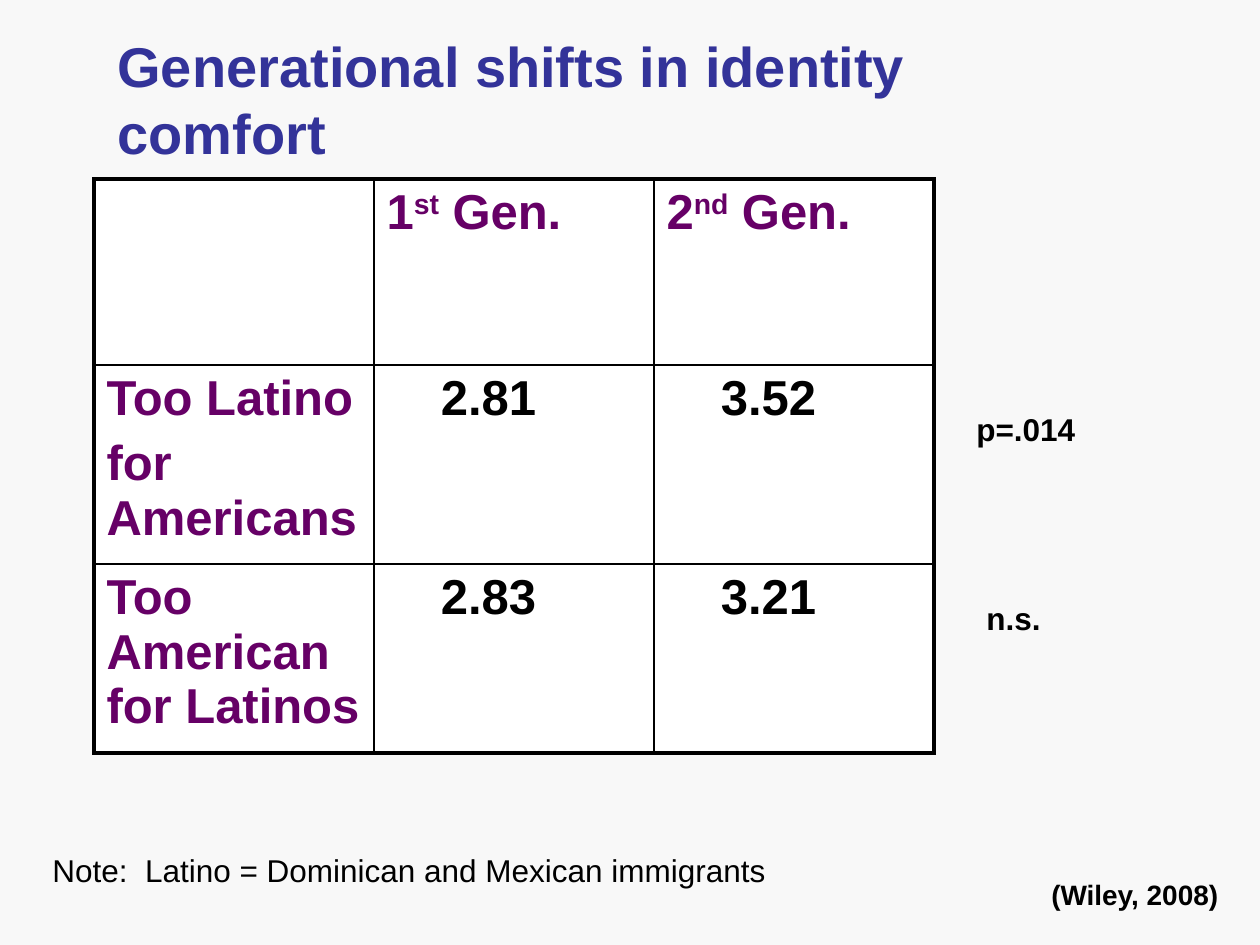
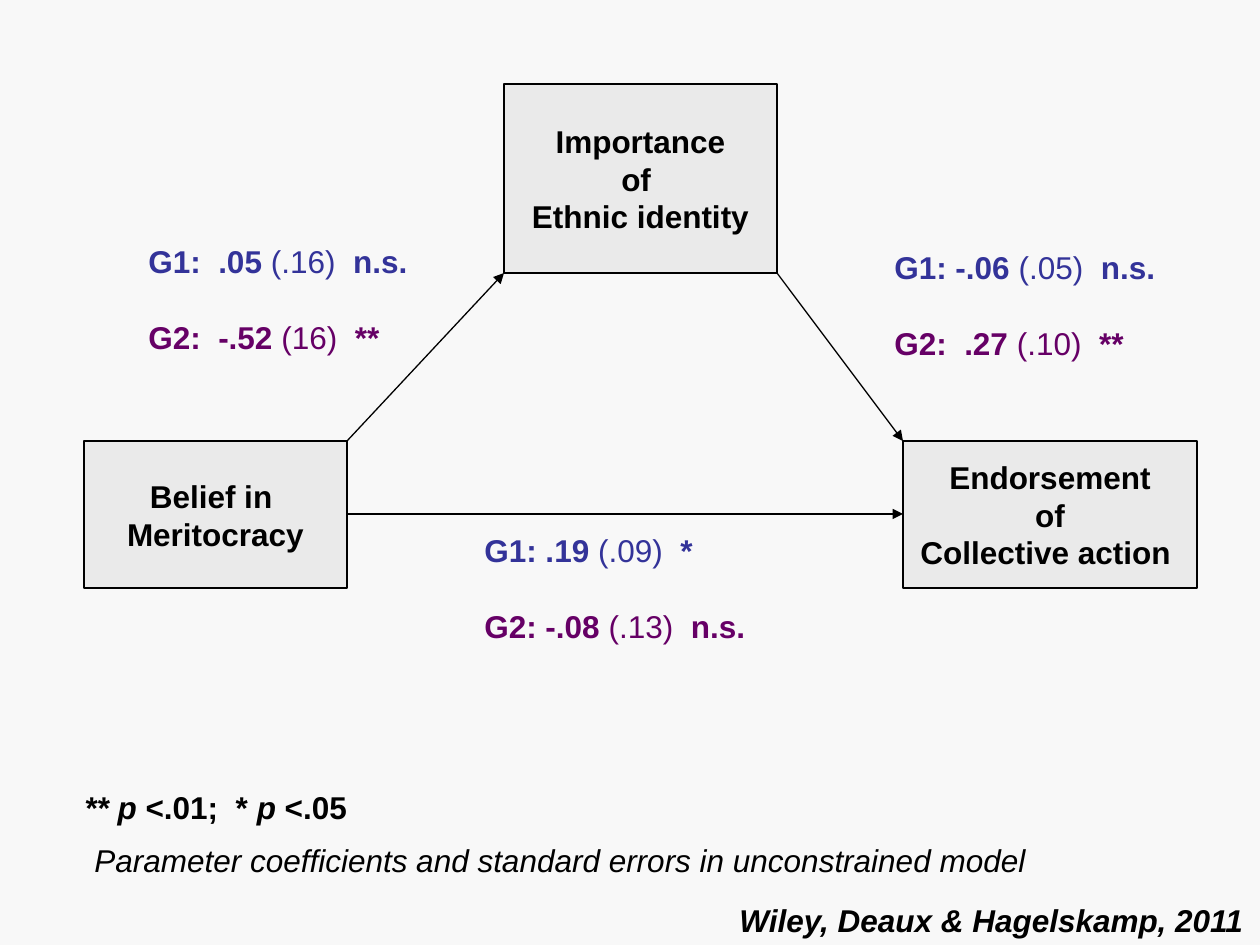
from dataclasses import dataclass
from typing import NamedTuple

from lxml import etree
from pptx import Presentation
from pptx.dml.color import RGBColor
from pptx.enum.shapes import MSO_CONNECTOR, MSO_SHAPE
from pptx.enum.text import MSO_ANCHOR, MSO_AUTO_SIZE, PP_ALIGN
from pptx.oxml.ns import qn
from pptx.util import Emu, Pt

RECT = MSO_SHAPE.RECTANGLE
STRAIGHT = MSO_CONNECTOR.STRAIGHT
MIDDLE = MSO_ANCHOR.MIDDLE
CENTER = PP_ALIGN.CENTER
FIXED = MSO_AUTO_SIZE.NONE
BLANK_LAYOUT = 6
EMU_PER_PX = 914400 / 126


@dataclass(frozen=True)
class Theme:
    font: str = "Arial"
    background: str = "F8F8F8"
    ink: str = "000000"
    blue: str = "333399"
    purple: str = "660066"
    node: str = "EAEAEA"
    cell: str = "FFFFFF"
    title: int = 32
    table: int = 28
    body: int = 18
    source: int = 16


THEME = Theme()


class Box(NamedTuple):
    left: int
    top: int
    width: int
    height: int

    @property
    def right(self):
        return self.left + self.width

    @property
    def bottom(self):
        return self.top + self.height

    @property
    def middle(self):
        return self.top + self.height // 2


def px(length):
    return Emu(round(length * EMU_PER_PX))


def rgb(color):
    return RGBColor.from_string(color)


def write(frame, paragraphs, align=None, gap=0, **base):
    """Fill a text frame; a paragraph is a string or a list of strings and (string, format) runs."""
    for index, runs in enumerate(paragraphs):
        paragraph = frame.add_paragraph() if index else frame.paragraphs[0]
        paragraph.alignment = align
        if index:
            paragraph.space_before = Pt(gap)
        for part in [runs] if isinstance(runs, str) else runs:
            words, own = (part, {}) if isinstance(part, str) else part
            look = {**base, **own}
            run = paragraph.add_run()
            run.text = words
            run.font.name = THEME.font
            run.font.size = Pt(look.get("size", THEME.body))
            run.font.bold = look.get("bold", False)
            run.font.italic = look.get("italic", False)
            run.font.color.rgb = rgb(look.get("color", THEME.ink))
            if look.get("raised"):
                run._r.get_or_add_rPr().set("baseline", "30000")


def label(slide, box, paragraphs, **look):
    frame = slide.shapes.add_textbox(*map(px, box)).text_frame
    frame.word_wrap = True
    frame.auto_size = FIXED
    write(frame, paragraphs, **look)


def new_slide(deck):
    slide = deck.slides.add_slide(deck.slide_layouts[BLANK_LAYOUT])
    slide.background.fill.solid()
    slide.background.fill.fore_color.rgb = rgb(THEME.background)
    return slide


def border(cell, side, width):
    line = etree.SubElement(cell._tc.get_or_add_tcPr(), qn(f"a:ln{side}"), w=str(Pt(width)))
    fill = etree.SubElement(line, qn("a:solidFill"))
    etree.SubElement(fill, qn("a:srgbClr"), val=THEME.ink)


def comfort_table(slide, box, row_heights):
    raised = {"raised": True}
    rows = [
        [[], [["1", ("st", raised), " Gen."]], [["2", ("nd", raised), " Gen."]]],
        [["Too Latino", "for Americans"], ["2.81"], ["3.52"]],
        [["Too American for Latinos"], ["2.83"], ["3.21"]],
    ]
    last = len(rows) - 1
    table = slide.shapes.add_table(len(rows), len(rows[0]), *map(px, box)).table
    table.first_row = table.horz_banding = False
    for column in table.columns:
        column.width = px(box.width // len(rows[0]))
    for r, (row, height) in enumerate(zip(rows, row_heights)):
        table.rows[r].height = px(height)
        for c, paragraphs in enumerate(row):
            cell = table.cell(r, c)
            outer = {"L": c == 0, "R": c == last, "T": r == 0, "B": r == last}
            for side, is_outer in outer.items():
                border(cell, side, 2.25 if is_outer else 1)
            cell.fill.solid()
            cell.fill.fore_color.rgb = rgb(THEME.cell)
            is_score = r > 0 and c > 0
            if is_score:
                cell.margin_left = px(67)
            write(cell.text_frame, paragraphs, size=THEME.table, bold=True, gap=6,
                  color=THEME.ink if is_score else THEME.purple)


def identity_comfort_slide(deck):
    slide = new_slide(deck)
    label(slide, Box(105, 25, 1000, 145), ["Generational shifts in identity comfort"],
          size=THEME.title, color=THEME.blue, bold=True)
    row_heights = [186, 199, 189]
    comfort_table(slide, Box(94, 179, 840, sum(row_heights)), row_heights)
    label(slide, Box(964, 404, 150, 50), ["p=.014"], bold=True)
    label(slide, Box(974, 593, 100, 50), ["n.s."], bold=True)
    label(slide, Box(40, 845, 780, 50), ["Note:  Latino = Dominican and Mexican immigrants"])
    label(slide, Box(1039, 871, 210, 47), ["(Wiley, 2008)"], size=THEME.source, bold=True)


def concept(slide, box, lines):
    shape = slide.shapes.add_shape(RECT, *map(px, box))
    shape.shadow.inherit = False
    shape.fill.solid()
    shape.fill.fore_color.rgb = rgb(THEME.node)
    shape.line.color.rgb = rgb(THEME.ink)
    shape.line.width = Pt(1.5)
    shape.text_frame.word_wrap = False
    shape.text_frame.vertical_anchor = MIDDLE
    write(shape.text_frame, lines, align=CENTER, bold=True)


def arrow(slide, start, end):
    connector = slide.shapes.add_connector(STRAIGHT, *map(px, (*start, *end)))
    connector.line.color.rgb = rgb(THEME.ink)
    connector.line.width = Pt(0.75)
    line = connector._element.spPr.find(qn("a:ln"))
    etree.SubElement(line, qn("a:tailEnd"), type="triangle")
    etree.SubElement(connector._element.spPr, qn("a:effectLst"))


def coefficients(slide, box, first, second):
    """Show each generation's estimate, standard error and significance."""
    paragraphs = []
    for color, (estimate, error, significance) in zip((THEME.blue, THEME.purple), (first, second)):
        strong = {"color": color, "bold": True}
        paragraphs.append([(estimate, strong), (error, {"color": color}), (significance, strong)])
    label(slide, box, paragraphs, gap=21.5)


def mediation_slide(deck):
    slide = new_slide(deck)
    identity = Box(504, 84, 273, 189)
    belief = Box(84, 441, 263, 147)
    action = Box(903, 441, 294, 147)
    concept(slide, identity, ["Importance", "of ", "Ethnic identity"])
    concept(slide, belief, ["Belief in ", "Meritocracy"])
    concept(slide, action, ["Endorsement", "of", "Collective action "])

    arrow(slide, (belief.right, belief.top), (identity.left, identity.bottom))
    arrow(slide, (identity.right, identity.bottom), (action.left, action.top))
    arrow(slide, (belief.right, belief.middle), (action.left, action.middle))

    coefficients(slide, Box(136, 236, 315, 126),
                 ("G1:  .05 ", "(.16)  ", "n.s."), ("G2:  -.52 ", "(16)  ", "**"))
    coefficients(slide, Box(882, 242, 315, 126),
                 ("G1: -.06 ", "(.05)  ", "n.s."), ("G2:  .27 ", "(.10)  ", "**"))
    coefficients(slide, Box(472, 525, 315, 126),
                 ("G1: .19 ", "(.09)  ", "*"), ("G2: -.08 ", "(.13)  ", "n.s."))

    slanted = {"italic": True}
    label(slide, Box(72, 782, 340, 50),
          [[("** p ", slanted), "<.01;  * ", ("p ", slanted), "<.05"]], bold=True)
    label(slide, Box(82, 835, 1020, 50),
          ["Parameter coefficients and standard errors in unconstrained model"], italic=True)
    label(slide, Box(727, 895, 533, 50), ["Wiley, Deaux & Hagelskamp, 2011"],
          bold=True, italic=True)


def main():
    deck = Presentation()
    deck.slide_width, deck.slide_height = px(1260), px(945)
    identity_comfort_slide(deck)
    mediation_slide(deck)
    deck.save("out.pptx")


if __name__ == "__main__":
    main()
